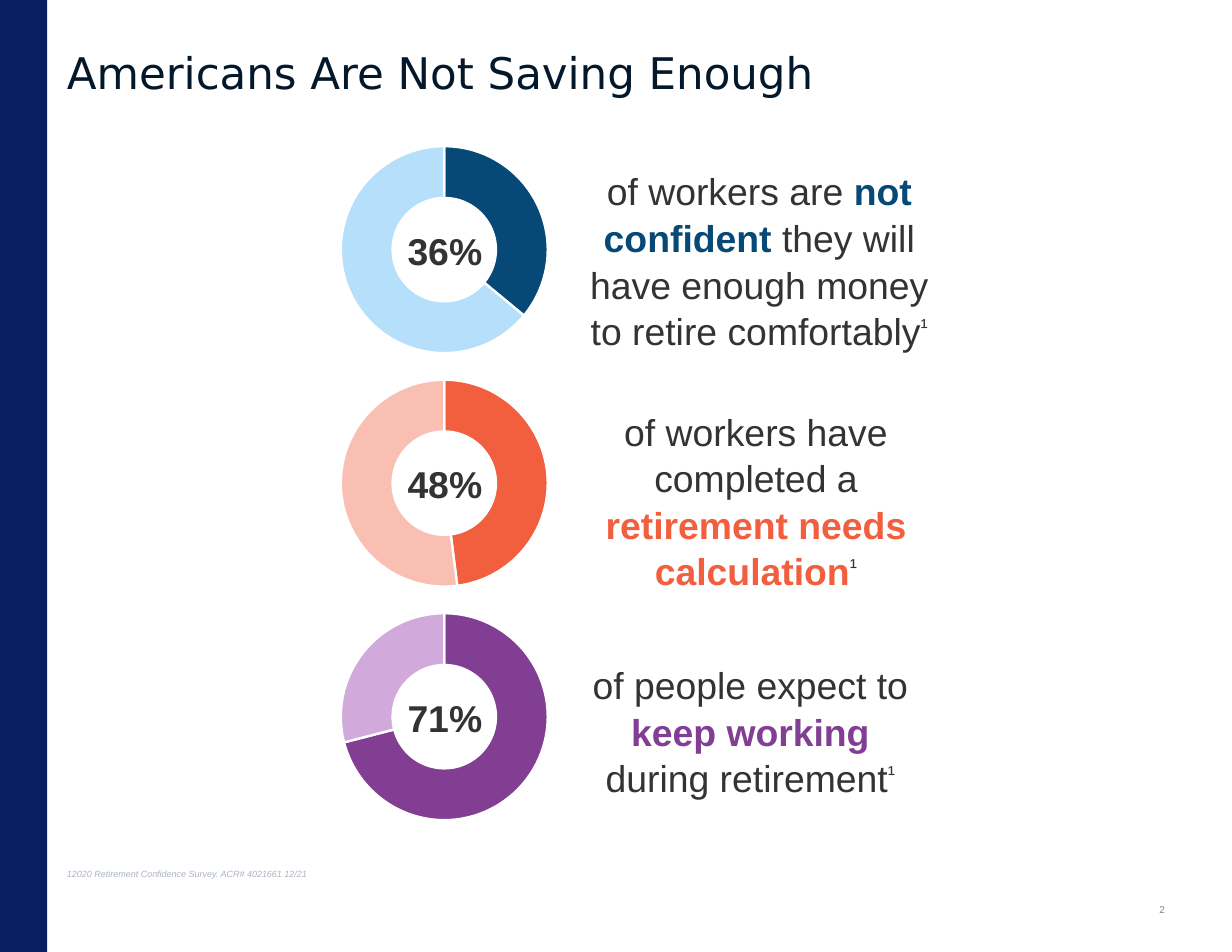
from lxml.etree import SubElement
from pptx import Presentation
from pptx.chart.data import CategoryChartData
from pptx.dml.color import RGBColor
from pptx.enum.chart import XL_CHART_TYPE as ChartType
from pptx.enum.shapes import MSO_SHAPE as Preset
from pptx.enum.text import MSO_ANCHOR as Anchor, MSO_AUTO_SIZE as AutoSize, PP_ALIGN as Align
from pptx.oxml.ns import qn
from pptx.util import Inches, Pt

# Content
TITLE = "Americans Are Not Saving Enough"
FOOTNOTE = "12020 Retirement Confidence Survey. ACR# 4021661 12/21"
PAGE_NUMBER = "2"
NOTE_MARK = "¹"

# Caption runs are (text, style); caption_at is left, and top below the row's top
FINDINGS = [
    dict(percent=36, strong="074976", pale="B6DFFB", caption_at=(5.13, 0.24), caption=[
        ("of workers are ", "body"), ("not confident ", "key"),
        ("they will have enough money to retire comfortably", "body"), (NOTE_MARK, "mark")]),
    dict(percent=48, strong="F15F3F", pale="F9BFB2", caption_at=(5.1, 0.3), caption=[
        ("of workers have completed a ", "body"), ("retirement needs calculation", "key"),
        (NOTE_MARK, "mark")]),
    dict(percent=71, strong="823E93", pale="D1AADB", caption_at=(5.05, 0.48), caption=[
        ("of people expect to ", "body"), ("keep working ", "key"),
        ("during retirement", "body"), (NOTE_MARK, "mark")]),
]

# Theme
THEME = dict(
    band="0A1F62", gap="FFFFFF", text="323332",
    title=dict(name="DejaVu Sans", size=28, color="03182A"),
    body=dict(name="Arial", size=24, color="323332", bold=False),
    number=dict(name="Arial", size=24, color="323332", bold=True),
    footnote=dict(name="Arial", size=5.8, color="AAB4C1", italic=True),
    page=dict(name="Arial", size=6.5, color="838683"),
    chart=dict(name="Arial", size=10, color="323332"),
)

# Grid, in inches
WIDTH, HEIGHT = 11, 8.5
BAND_WIDTH = 0.42
MARGIN, CONTENT_WIDTH = 0.5, 10
ROW_TOP, ROW_STEP = 1.2, 2.085
CHART_LEFT, CHART_WIDTH, CHART_HEIGHT = 2.83, 2.67, 2.06
NUMBER_LEFT, NUMBER_DROP = 3.54, 0.77
CAPTION_WIDTH, CAPTION_LINE = 3.3, 1.04
PLOT_SHARES = dict(x=0.08, y=0, w=0.692, h=1)


def set_font(font, style):
    for key, value in style.items():
        if key == "color":
            font.color.rgb = RGBColor.from_string(value)
        else:
            setattr(font, key, Pt(value) if key == "size" else value)


def add_text(slide, at, runs, frame_format=None, **paragraph_format):
    """Add a one-paragraph box; runs are (text, style, baseline)."""
    frame = slide.shapes.add_textbox(*map(Inches, at)).text_frame
    for key, value in {"word_wrap": True, **(frame_format or {})}.items():
        setattr(frame, key, value)
    paragraph = frame.paragraphs[0]
    for key, value in paragraph_format.items():
        setattr(paragraph, key, value)
    for text, style, baseline in runs:
        run = paragraph.add_run()
        run.text = text
        set_font(run.font, style)
        if baseline:
            run.font._element.set("baseline", str(baseline * 1000))


def place_plot(chart):
    """Fix the inner plot area as shares of the chart frame."""
    area = chart._chartSpace.find(".//" + qn("c:plotArea"))
    layout = area.find(qn("c:layout"))
    if layout is None:
        layout = SubElement(area, qn("c:layout"))
        area.insert(0, layout)
    manual = SubElement(layout, qn("c:manualLayout"))
    values = dict(layoutTarget="inner", xMode="edge", yMode="edge", **PLOT_SHARES)
    for tag, value in values.items():
        SubElement(manual, qn("c:" + tag)).set("val", str(value))


def add_doughnut(slide, top, finding):
    data = CategoryChartData()
    data.categories = ["1", "2"]
    data.add_series("Series 1", [finding["percent"], 100 - finding["percent"]])
    at = map(Inches, (CHART_LEFT, top, CHART_WIDTH, CHART_HEIGHT))
    chart = slide.shapes.add_chart(ChartType.DOUGHNUT, *at, data).chart
    chart.has_legend = chart.has_title = False
    set_font(chart.font, THEME["chart"])
    plot = chart.plots[0]
    plot.has_data_labels = False
    plot.vary_by_categories = True
    for index, color in enumerate((finding["strong"], finding["pale"])):
        part = plot.series[0].points[index].format
        part.fill.solid()
        part.fill.fore_color.rgb = RGBColor.from_string(color)
        part.line.color.rgb = RGBColor.from_string(THEME["gap"])
        part.line.width = Pt(1.5)
    place_plot(chart)


def add_finding(slide, row, finding):
    top = ROW_TOP + row * ROW_STEP
    add_doughnut(slide, top, finding)
    add_text(slide, (NUMBER_LEFT, top + NUMBER_DROP, 0.88, 0.5),
             [(f"{finding['percent']}%", THEME["number"], 0)],
             dict(word_wrap=False, auto_size=AutoSize.SHAPE_TO_FIT_TEXT),
             line_spacing=CAPTION_LINE)
    body = THEME["body"]
    key = {**body, "color": finding["strong"], "bold": True}
    styles = dict(body=(body, 0), key=(key, 0), mark=(body, 30))
    left, drop = finding["caption_at"]
    lines = 3 if row == 2 else 4
    add_text(slide, (left, top + drop, CAPTION_WIDTH, 0.1 + 0.405 * lines),
             [(text, *styles[style]) for text, style in finding["caption"]],
             dict(auto_size=AutoSize.SHAPE_TO_FIT_TEXT),
             alignment=Align.CENTER, line_spacing=CAPTION_LINE)


def main():
    presentation = Presentation()
    presentation.slide_width, presentation.slide_height = Inches(WIDTH), Inches(HEIGHT)
    slide = presentation.slides.add_slide(presentation.slide_layouts[6])

    # Side band
    band = slide.shapes.add_shape(Preset.RECTANGLE, 0, 0, Inches(BAND_WIDTH), Inches(HEIGHT))
    band.shadow.inherit = False
    band.fill.solid()
    band.fill.fore_color.rgb = RGBColor.from_string(THEME["band"])
    band.line.fill.background()

    # Title and page number
    add_text(slide, (MARGIN, 0.46, CONTENT_WIDTH, 0.42), [(TITLE, THEME["title"], 0)],
             dict(vertical_anchor=Anchor.MIDDLE), line_spacing=0.9)
    add_text(slide, (MARGIN + CONTENT_WIDTH - 0.5, 7.93, 0.5, 0.38),
             [(PAGE_NUMBER, THEME["page"], 0)],
             dict(vertical_anchor=Anchor.MIDDLE), alignment=Align.RIGHT)

    # Findings, one per row
    for row, finding in enumerate(FINDINGS):
        add_finding(slide, row, finding)

    # Footnote
    add_text(slide, (MARGIN, 7.57, CONTENT_WIDTH, 0.33), [(FOOTNOTE, THEME["footnote"], 0)],
             dict(vertical_anchor=Anchor.BOTTOM))
    presentation.save("out.pptx")


if __name__ == "__main__":
    main()
